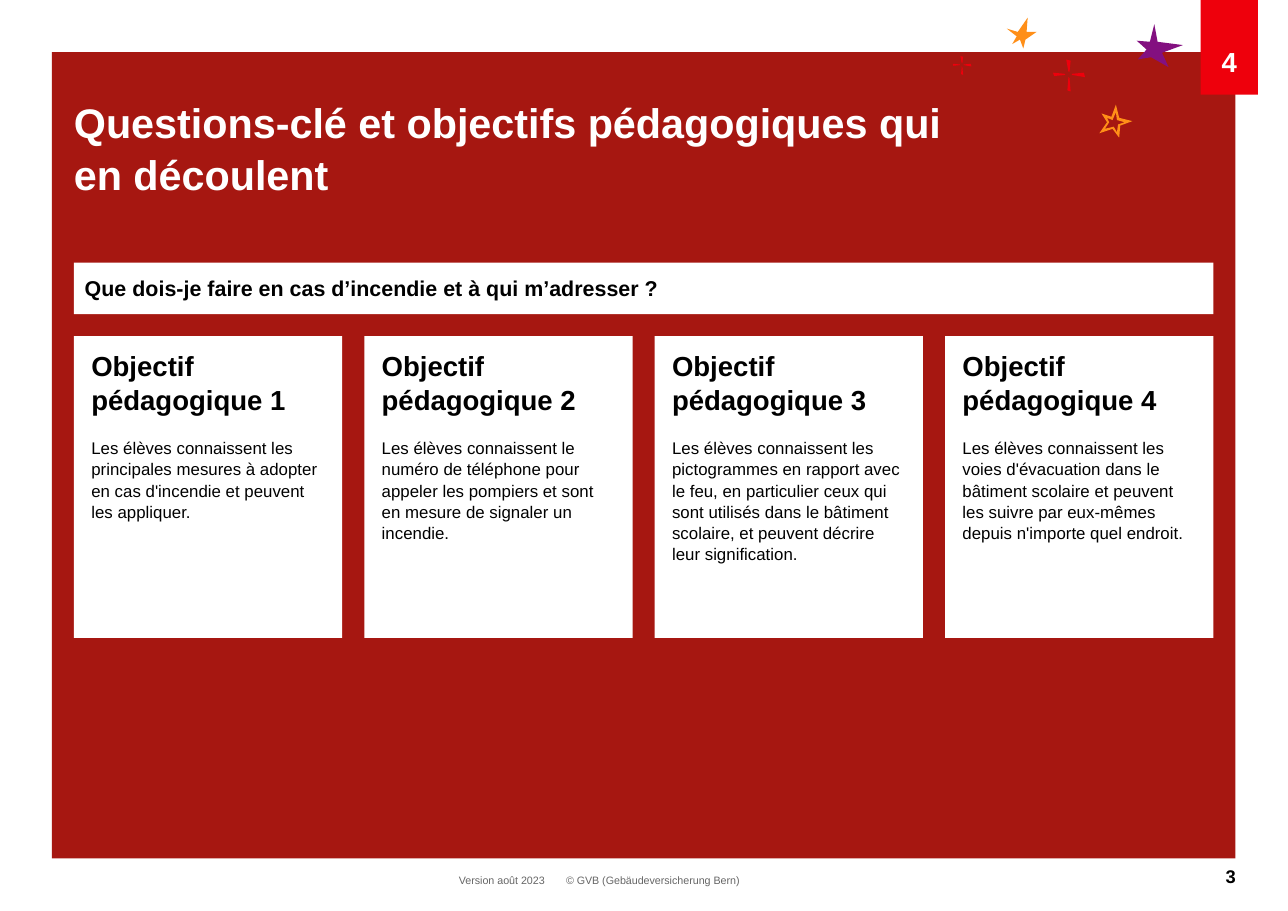
from lxml import etree
from pptx import Presentation
from pptx.dml.color import RGBColor
from pptx.enum.shapes import MSO_SHAPE
from pptx.enum.text import MSO_ANCHOR as ANCHOR, MSO_AUTO_SIZE as FIT, PP_ALIGN as ALIGN
from pptx.oxml.ns import qn
from pptx.util import Pt

DARK_RED = RGBColor(0xA6, 0x17, 0x11)
RED = RGBColor(0xEE, 0x00, 0x0C)
PURPLE = RGBColor(0x83, 0x10, 0x80)
ORANGE = RGBColor(0xFF, 0x8F, 0x18)
GREY = RGBColor(0x66, 0x66, 0x66)
BLACK = RGBColor(0, 0, 0)
WHITE = RGBColor(0xFF, 0xFF, 0xFF)

LEFT, CONTENT_WIDTH, GAP = 48.3, 744.8, 14.4
CARD_TOP, CARD_HEIGHT = 219.6, 197.2

OBJECTIVES = [
    "Les élèves connaissent les principales mesures à adopter en cas d'incendie "
    "et peuvent les appliquer.",
    "Les élèves connaissent le numéro de téléphone pour appeler les pompiers "
    "et sont en mesure de signaler un incendie.",
    "Les élèves connaissent les pictogrammes en rapport avec le feu, en particulier ceux "
    "qui sont utilisés dans le bâtiment scolaire, et peuvent décrire leur signification.",
    "Les élèves connaissent les voies d'évacuation dans le bâtiment scolaire "
    "et peuvent les suivre par eux-mêmes depuis n'importe quel endroit.",
]

# Outlines in hundredths of an inch, one list per contour
PURPLE_STAR = [[(12, 16), (0, 15), (9, 23), (1, 32), (13, 30),
                (29, 39), (23, 26), (42, 19), (19, 16), (16, 0)]]
ORANGE_STAR = [[(5, 24), (12, 20), (15, 28), (17, 20), (27, 13),
                (18, 13), (19, 0), (10, 13), (0, 10), (9, 17)]]
HOLLOW_STAR = [[(18, 30), (12, 22), (0, 26), (7, 16), (2, 8),
                (11, 11), (15, 0), (18, 12), (30, 15), (19, 19)],
               [(13, 20), (16, 25), (17, 18), (23, 16), (16, 14),
                (15, 7), (12, 14), (7, 12), (9, 16), (5, 22)]]
SPARKLE = [[(14, 11), (12, 0), (16, 1), (15, 11)],
           [(15, 17), (16, 29), (13, 28), (14, 16)],
           [(17, 13), (28, 12), (29, 16), (17, 14)],
           [(11, 14), (1, 15), (0, 12), (11, 13)]]


class SlideBuilder:
    font = "Arial"

    def __init__(self, slide):
        self.slide = slide

    def paint(self, shape, color):
        shape.fill.solid()
        shape.fill.fore_color.rgb = color
        shape.line.fill.background()
        return shape

    def rect(self, box, color):
        shape = self.slide.shapes.add_shape(MSO_SHAPE.RECTANGLE, *map(Pt, box))
        shape.shadow.inherit = False
        return self.paint(shape, color)

    def outline(self, contours, left, top, color, unit=0.72):
        first, *others = contours
        builder = self.slide.shapes.build_freeform(*first[0], scale=Pt(unit))
        builder.add_line_segments(first[1:], close=True)
        for contour in others:
            builder.move_to(*contour[0])
            builder.add_line_segments(contour[1:], close=True)
        shape = builder.convert_to_shape(Pt(left), Pt(top))
        shape.shadow.inherit = False
        return self.paint(shape, color)

    def frame(self, shape, insets=(0, 0, 0, 0), anchor=ANCHOR.TOP):
        frame = shape.text_frame
        frame.word_wrap = True
        frame.auto_size = FIT.NONE
        frame.vertical_anchor = anchor
        (frame.margin_left, frame.margin_top,
         frame.margin_right, frame.margin_bottom) = map(Pt, insets)
        return frame

    def add_text(self, paragraph, text, size, color=BLACK, bold=True,
                 align=ALIGN.LEFT, spacing=1.0, before=0):
        paragraph.alignment = align
        paragraph.line_spacing = spacing
        paragraph.space_before = Pt(before)
        run = paragraph.add_run()
        run.text = text
        run.font.name = self.font
        run.font.size = Pt(size)
        run.font.bold = bold
        run.font.color.rgb = color

    def label(self, box, text, size, **style):
        shape = self.slide.shapes.add_textbox(*map(Pt, box))
        self.add_text(self.frame(shape).paragraphs[0], text, size, **style)

    def place(self, placeholder, box):
        (placeholder.left, placeholder.top,
         placeholder.width, placeholder.height) = map(Pt, box)

    def title(self, box, text):
        heading = self.slide.shapes.title
        self.place(heading, box)
        self.add_text(self.frame(heading).paragraphs[0], text, 27, WHITE, spacing=1.05)

    def card(self, placeholder, box, heading, body):
        self.place(placeholder, box)
        self.paint(placeholder, WHITE)
        frame = self.frame(placeholder, (11.4, 7.2, 11.4, 7.2))
        for paragraph in (frame.paragraphs[0], frame.add_paragraph()):
            props = paragraph._p.get_or_add_pPr()
            props.set("marL", "0")
            props.set("indent", "0")
            etree.SubElement(props, qn("a:buNone"))
        self.add_text(frame.paragraphs[0], heading, 18, spacing=1.05)
        self.add_text(frame.paragraphs[1], body, 11, bold=False, spacing=1.05, before=13.3)


def main():
    prs = Presentation()
    prs.slide_width, prs.slide_height = Pt(841.9), Pt(595.3)
    comparison_layout = prs.slide_layouts[4]
    slide = prs.slides.add_slide(comparison_layout)
    page = SlideBuilder(slide)

    # Red panel, behind the placeholders
    panel = page.rect((34, 34, 773.6, 527), DARK_RED)
    slide.shapes.title._element.addprevious(panel._element)

    # Stars and sparkles
    page.outline(PURPLE_STAR, 743, 15.8, PURPLE)
    page.outline(ORANGE_STAR, 658.1, 11.5, ORANGE)
    page.outline(HOLLOW_STAR, 718.6, 68.4, ORANGE)
    page.outline(SPARKLE, 688.3, 38.9, RED)
    page.outline(SPARKLE, 622.8, 36.7, RED, unit=0.42)

    # Chapter tab
    tab = page.rect((784.8, 0, 37.4, 61.9), RED)
    tab_frame = page.frame(tab, (0, 28.8, 0, 10.8), ANCHOR.BOTTOM)
    page.add_text(tab_frame.paragraphs[0], "4", 18, WHITE, align=ALIGN.CENTER)

    # Title and key question
    page.title((LEFT, 62, 581, 66), "Questions-clé et objectifs pédagogiques qui en découlent")
    question = page.rect((LEFT, 171.6, CONTENT_WIDTH, 33.7), WHITE)
    question_frame = page.frame(question, (7.2, 3.6, 7.2, 3.6), ANCHOR.MIDDLE)
    page.add_text(question_frame.paragraphs[0],
                  "Que dois-je faire en cas d’incendie et à qui m’adresser ?", 14)

    # Learning objectives
    count = len(OBJECTIVES)
    card_width = (CONTENT_WIDTH - (count - 1) * GAP) / count
    for i, objective in enumerate(OBJECTIVES):
        box = (LEFT + i * (card_width + GAP), CARD_TOP, card_width, CARD_HEIGHT)
        page.card(slide.placeholders[i + 1], box, f"Objectif pédagogique {i + 1}", objective)

    # Footer
    page.label((297.4, 571, 61.2, 9.4), "Version août 2023", 7,
               color=GREY, bold=False, align=ALIGN.CENTER)
    page.label((370, 571, 117, 9.4), "© GVB (Gebäudeversicherung Bern)", 7,
               color=GREY, bold=False)
    page.label((756.7, 565.2, 51, 12.2), "3", 12, align=ALIGN.RIGHT)

    prs.save("out.pptx")


if __name__ == "__main__":
    main()
